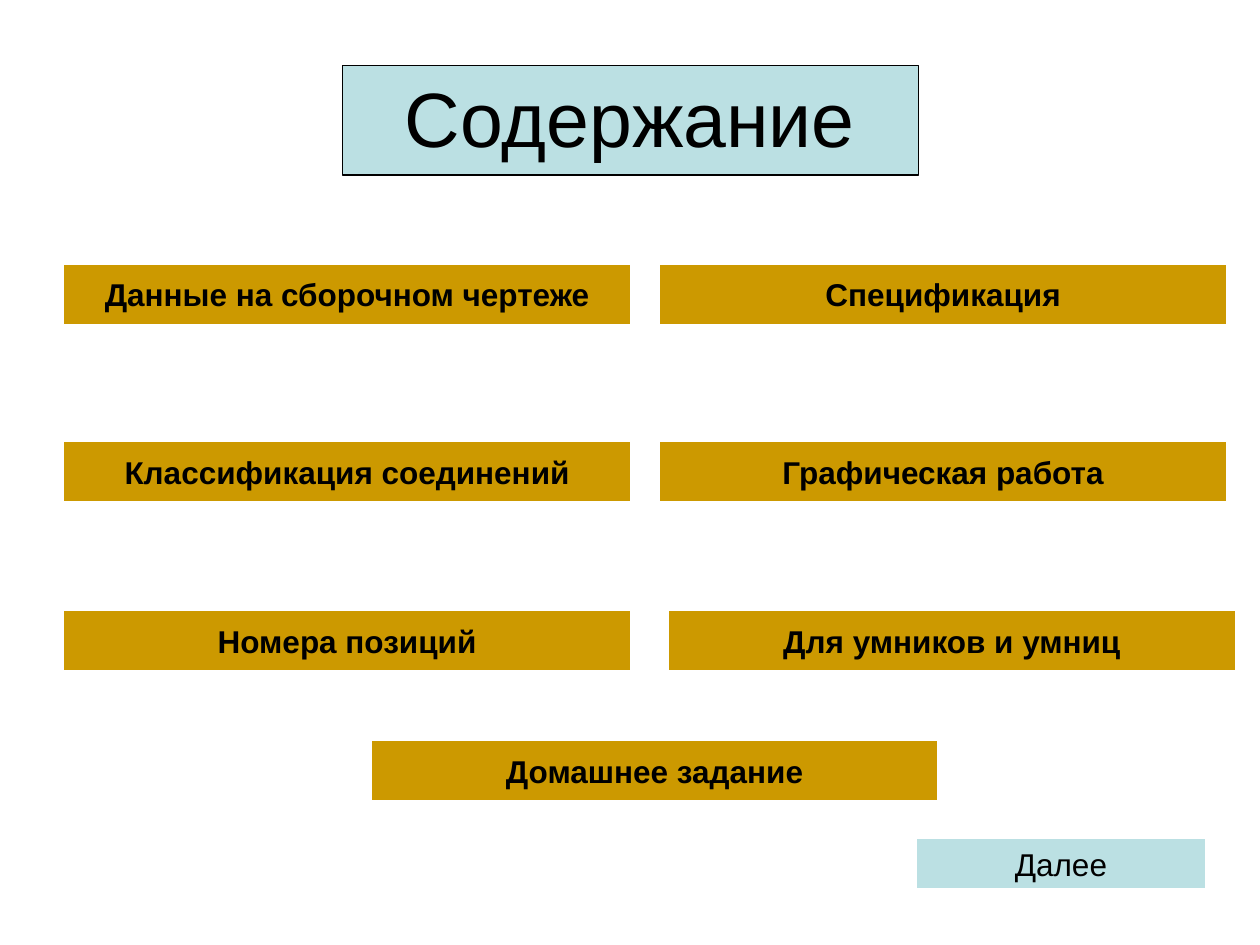
from pptx import Presentation
from pptx.dml.color import RGBColor
from pptx.enum.shapes import MSO_SHAPE
from pptx.enum.text import MSO_ANCHOR, PP_ALIGN
from pptx.util import Inches, Pt

# Content
TITLE = "Содержание"
GOLD, AQUA, BLACK = "CC9900", "BBE0E3", "000000"
LEFT, RIGHT = 0.51, 5.24
TOPICS = [  # text, left, top
    ("Данные на сборочном чертеже", LEFT, 2.1),
    ("Спецификация", RIGHT, 2.1),
    ("Классификация соединений", LEFT, 3.51),
    ("Графическая работа", RIGHT, 3.51),
    ("Номера позиций", LEFT, 4.85),
    ("Для умников и умниц", 5.31, 4.85),
    ("Домашнее задание", 2.95, 5.88),
]
TOPIC_SIZE = (4.49, 0.47)
NEXT = ("Далее", 7.28, 6.66, 2.28, 0.39)


def color(value):
    return RGBColor.from_string(value)


def write(shape, text, size=18, bold=False, wrap=False):
    frame = shape.text_frame
    frame.word_wrap = wrap
    frame.vertical_anchor = MSO_ANCHOR.MIDDLE
    paragraph = frame.paragraphs[0]
    paragraph.alignment = PP_ALIGN.CENTER
    run = paragraph.add_run()
    run.text = text
    run.font.name = "Arial"
    run.font.size = Pt(size)
    run.font.bold = bold
    run.font.color.rgb = color(BLACK)


def add_box(slide, kind, left, top, width, height, fill, line=None):
    shape = slide.shapes.add_shape(kind, *map(Inches, (left, top, width, height)))
    shape.shadow.inherit = False
    shape.fill.solid()
    shape.fill.fore_color.rgb = color(fill)
    if line:
        shape.line.color.rgb = color(line)
        shape.line.width = Pt(0.75)
    else:
        shape.line.fill.background()
    return shape


def add_button(slide, text, left, top, width, height, fill, bold=False):
    button = add_box(slide, MSO_SHAPE.ACTION_BUTTON_CUSTOM, left, top, width, height, fill)
    write(button, text, bold=bold)


def main():
    presentation = Presentation()
    presentation.slide_width, presentation.slide_height = Inches(10), Inches(7.5)
    slide = presentation.slides.add_slide(presentation.slide_layouts[6])

    # Title on its panel
    add_box(slide, MSO_SHAPE.RECTANGLE, 2.72, 0.52, 4.57, 0.87, AQUA, line=BLACK)
    title = slide.shapes.add_textbox(*map(Inches, (0.5, 0.3, 9, 1.25)))
    write(title, TITLE, size=44, wrap=True)

    # Topic buttons
    for text, left, top in TOPICS:
        add_button(slide, text, left, top, *TOPIC_SIZE, GOLD, bold=True)

    # Next button
    add_button(slide, *NEXT, AQUA)

    presentation.save("out.pptx")


if __name__ == "__main__":
    main()
